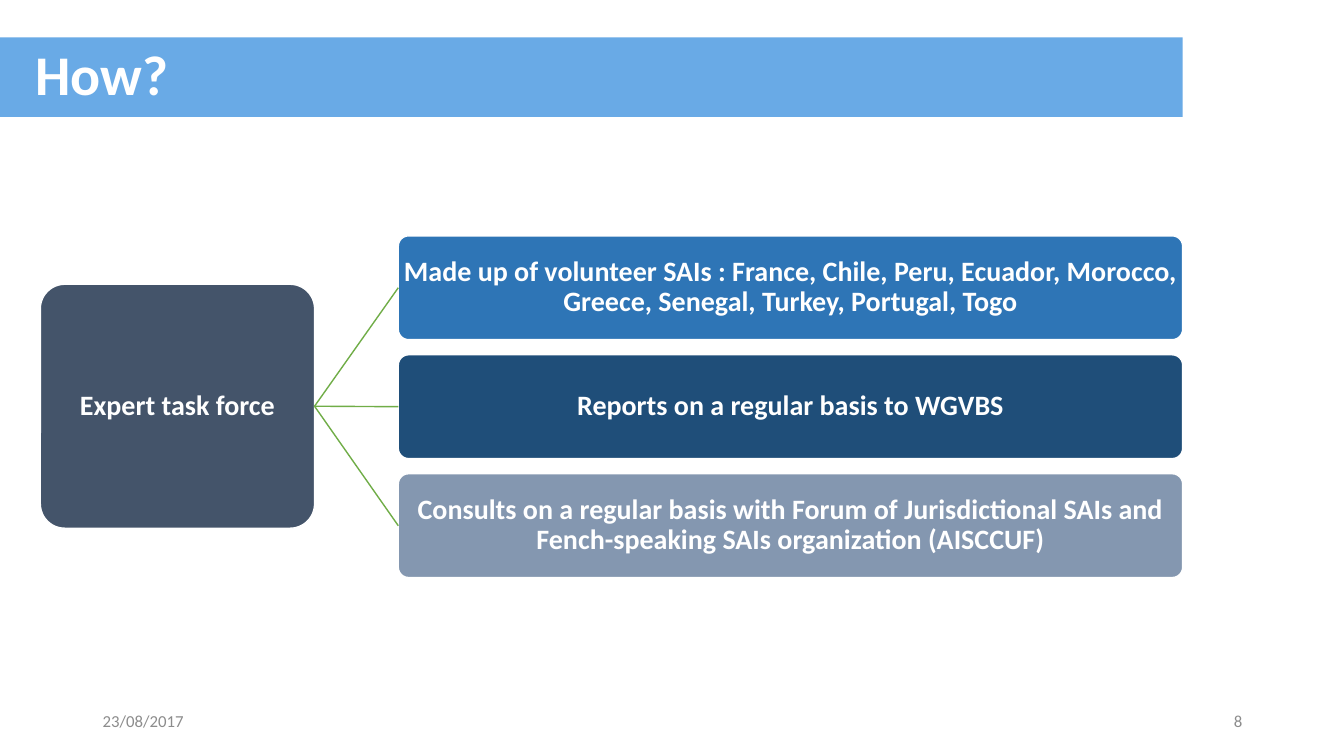
from pptx import Presentation
from pptx.dml.color import RGBColor
from pptx.enum.shapes import MSO_CONNECTOR, MSO_SHAPE
from pptx.enum.text import MSO_ANCHOR, PP_ALIGN
from pptx.oxml.ns import qn
from pptx.util import Inches, Pt
from lxml import etree

RECTANGLE, ROUNDED = MSO_SHAPE.RECTANGLE, MSO_SHAPE.ROUNDED_RECTANGLE
STRAIGHT = MSO_CONNECTOR.STRAIGHT
MIDDLE = MSO_ANCHOR.MIDDLE
LEFT, CENTER, RIGHT = PP_ALIGN.LEFT, PP_ALIGN.CENTER, PP_ALIGN.RIGHT
LEFT_SIDE, RIGHT_SIDE = 1, 3

TITLE = "How?"
ROOT = "Expert task force"
BRANCHES = [
    ("Made up of volunteer SAIs : France, Chile, Peru, Ecuador, Morocco, "
     "Greece, Senegal, Turkey, Portugal, Togo", "2E75B6"),
    ("Reports on a regular basis to WGVBS", "1F4E79"),
    ("Consults on a regular basis with Forum of Jurisdictional SAIs and "
     "Fench-speaking SAIs organization (AISCCUF)", "8497B0"),
]
FOOTERS = [("23/08/2017", 0.92, LEFT), ("8", 9.42, RIGHT)]

THEME = {
    "font": "Calibri",
    "banner": "69AAE6", "root": "44546A", "link": "70AD47",
    "white": "FFFFFF", "footer": "8C8C8C",
    "title_size": 40, "body_size": 20, "footer_size": 12, "line": 1,
}

BANNER = (0, 0.37, 11.73, 0.79)
ROOT_PLACE = (0.4, 2.82, 2.72, 2.42)
BRANCH_LEFT, BRANCH_TOP, BRANCH_WIDTH, BRANCH_HEIGHT = 3.95, 2.34, 7.78, 1.03
BRANCH_STEP = 1.18
FOOTER_TOP, FOOTER_WIDTH, FOOTER_HEIGHT = 6.95, 3, 0.4


def color(name):
    return RGBColor.from_string(THEME.get(name, name))


def write(box, text, size, ink, align, bold, margins, spacing=1.0):
    frame = box.text_frame
    left, top, right, bottom = (Inches(margin) for margin in margins)
    para = frame.paragraphs[0]
    span = para.add_run()
    span.text = text
    formats = [
        (frame, {"word_wrap": True, "vertical_anchor": MIDDLE,
                 "margin_left": left, "margin_top": top,
                 "margin_right": right, "margin_bottom": bottom}),
        (para, {"alignment": align, "line_spacing": spacing}),
        (span.font, {"name": THEME["font"], "size": Pt(THEME[size]), "bold": bold}),
    ]
    for target, values in formats:
        for name, value in values.items():
            setattr(target, name, value)
    span.font.color.rgb = color(ink)


def add_box(page, kind, place, fill):
    box = page.shapes.add_shape(kind, *(Inches(value) for value in place))
    box.shadow.inherit = False
    box.fill.solid()
    box.fill.fore_color.rgb = color(fill)
    box.line.fill.background()
    return box


def add_node(page, place, fill, text):
    box = add_box(page, ROUNDED, place, fill)
    box.adjustments[0] = 0.1
    box.line.color.rgb = color("white")
    box.line.width = Pt(THEME["line"])
    write(box, text, "body_size", "white", CENTER, True, (0.01,) * 4, 0.9)
    return box


def add_link(page, start, end):
    link = page.shapes.add_connector(STRAIGHT, 0, 0, 0, 0)
    link.begin_connect(start, RIGHT_SIDE)
    link.end_connect(end, LEFT_SIDE)
    link.line.color.rgb = color("link")
    link.line.width = Pt(THEME["line"])
    etree.SubElement(link._element.spPr, qn("a:effectLst"))


def main():
    deck = Presentation()
    deck.slide_width, deck.slide_height = Inches(13.33), Inches(7.5)
    page = deck.slides.add_slide(deck.slide_layouts[6])

    banner = add_box(page, RECTANGLE, BANNER, "banner")
    write(banner, TITLE, "title_size", "white", LEFT, True,
          (0.35, 0.05, 0.1, 0.05), 0.9)

    for text, left, align in FOOTERS:
        place = (left, FOOTER_TOP, FOOTER_WIDTH, FOOTER_HEIGHT)
        box = page.shapes.add_textbox(*(Inches(value) for value in place))
        write(box, text, "footer_size", "footer", align, False,
              (0.1, 0.05, 0.1, 0.05))

    root = add_node(page, ROOT_PLACE, "root", ROOT)
    for index, (text, fill) in enumerate(BRANCHES):
        top = BRANCH_TOP + index * BRANCH_STEP
        place = (BRANCH_LEFT, top, BRANCH_WIDTH, BRANCH_HEIGHT)
        add_link(page, root, add_node(page, place, fill, text))

    deck.save("out.pptx")


if __name__ == "__main__":
    main()
